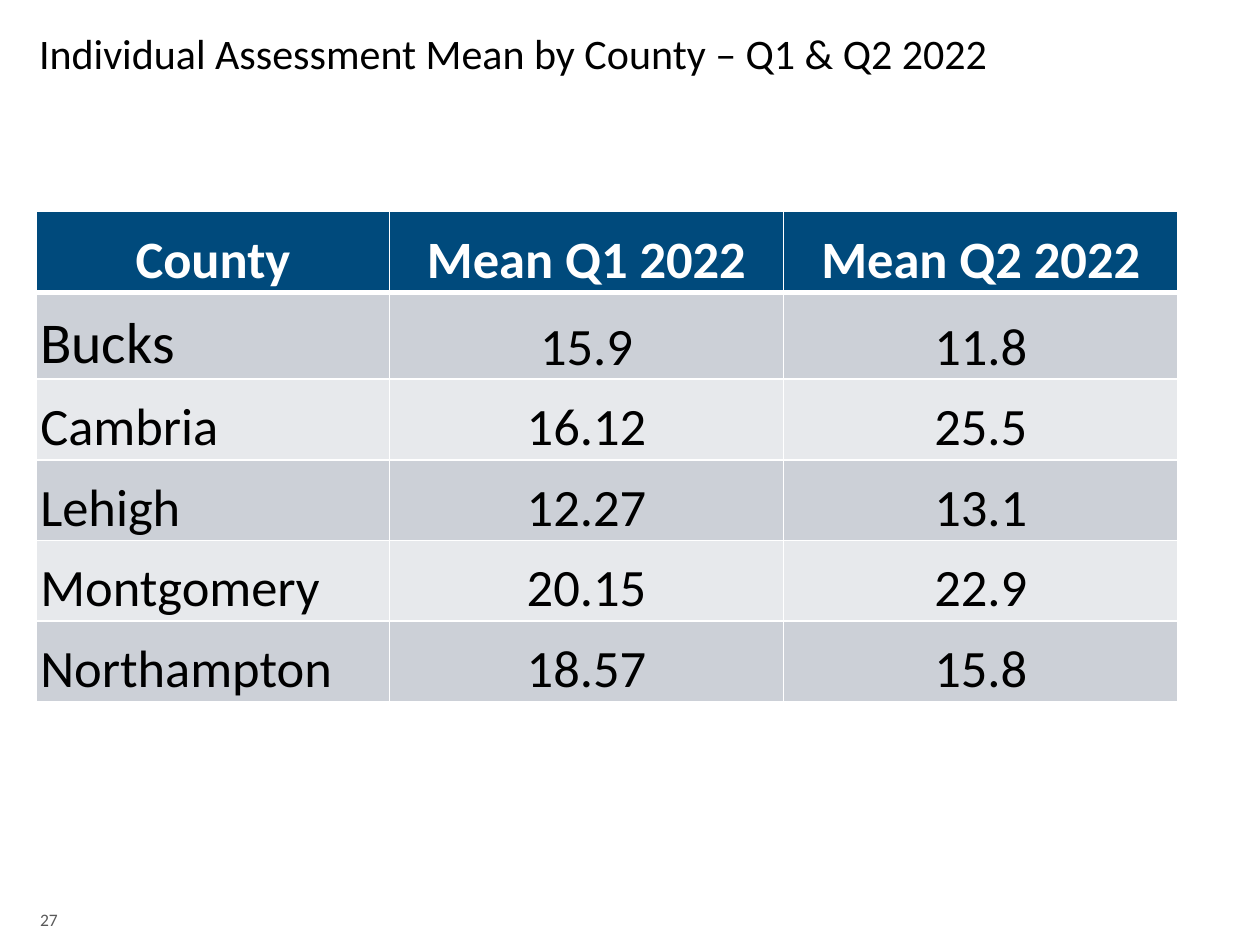
from typing import NamedTuple

from lxml.etree import SubElement
from pptx import Presentation
from pptx.dml.color import RGBColor
from pptx.enum.text import MSO_ANCHOR, PP_ALIGN
from pptx.oxml.ns import qn
from pptx.util import Inches, Pt

FONT = "Calibri"
BLACK, WHITE, GRAY = "000000", "FFFFFF", "595959"
HEADER_FILL = "004A7C"
BAND_FILLS = ("CCD0D7", "E7E9EC")
HEADERS = ("County", "Mean Q1 2022", "Mean Q2 2022")
COLUMN_WIDTHS = (2.8, 3.13, 3.13)
HEADER_HEIGHT = 0.64


class CountyRow(NamedTuple):
    county: str
    first_quarter: str
    second_quarter: str
    name_size: int = 30
    height: float = 0.64


COUNTY_ROWS = (
    CountyRow("Bucks", "15.9", "11.8", name_size=33, height=0.69),
    CountyRow("Cambria", "16.12", "25.5"),
    CountyRow("Lehigh", "12.27", "13.1"),
    CountyRow("Montgomery", "20.15", "22.9"),
    CountyRow("Northampton", "18.57", "15.8"),
)


def color(value: str) -> RGBColor:
    return RGBColor.from_string(value)


def write_text(text_frame, text: str, *, size: float, font_color: str = BLACK,
               bold: bool = False, align=PP_ALIGN.LEFT, line_spacing=None):
    paragraph = text_frame.paragraphs[0]
    paragraph.alignment = align
    if line_spacing:
        paragraph.line_spacing = line_spacing
    run = paragraph.add_run()
    run.text = text
    run.font.name = FONT
    run.font.size = Pt(size)
    run.font.bold = bold
    run.font.color.rgb = color(font_color)
    return paragraph


def add_borders(cell, bottom_width: float) -> None:
    """Draw white cell borders; they must come before the fill in the XML."""
    properties = cell._tc.get_or_add_tcPr()
    for side, width in (("L", 1), ("R", 1), ("T", 1), ("B", bottom_width)):
        line = SubElement(properties, qn(f"a:ln{side}"), w=str(Pt(width)))
        SubElement(SubElement(line, qn("a:solidFill")), qn("a:srgbClr"), val=WHITE)


def format_cell(cell, text: str, fill: str, bottom_width: float = 1, **text_format) -> None:
    cell.vertical_anchor = MSO_ANCHOR.BOTTOM
    cell.margin_left = cell.margin_right = cell.margin_top = Inches(0.03)
    cell.margin_bottom = 0
    add_borders(cell, bottom_width)
    cell.fill.solid()
    cell.fill.fore_color.rgb = color(fill)
    write_text(cell.text_frame, text, **text_format)


def add_title(slide) -> None:
    title = slide.shapes.title
    title.left, title.top = Inches(0.21), Inches(0.21)
    title.width, title.height = Inches(8.27), Inches(1.24)
    title.text_frame.vertical_anchor = MSO_ANCHOR.TOP
    write_text(title.text_frame, "Individual Assessment Mean by County – Q1 & Q2 2022",
               size=24, line_spacing=0.9)


def add_page_number(slide) -> None:
    box = slide.shapes.add_textbox(Inches(0.22), Inches(7.03), Inches(0.44), Inches(0.4))
    box.text_frame.word_wrap = True
    box.text_frame.vertical_anchor = MSO_ANCHOR.BOTTOM
    paragraph = write_text(box.text_frame, "27", size=10, font_color=GRAY)
    paragraph.space_after = Pt(6)


def add_county_table(slide) -> None:
    heights = [HEADER_HEIGHT, *(row.height for row in COUNTY_ROWS)]
    table = slide.shapes.add_table(
        len(heights), len(HEADERS), Inches(0.29), Inches(1.68),
        Inches(sum(COLUMN_WIDTHS)), Inches(sum(heights))).table
    for column, width in zip(table.columns, COLUMN_WIDTHS):
        column.width = Inches(width)
    for table_row, height in zip(table.rows, heights):
        table_row.height = Inches(height)

    # Header row
    for column_index, header in enumerate(HEADERS):
        format_cell(table.cell(0, column_index), header, HEADER_FILL, bottom_width=3,
                    size=30, font_color=WHITE, bold=True, align=PP_ALIGN.CENTER)

    # Banded county rows
    for row_index, row in enumerate(COUNTY_ROWS, start=1):
        fill = BAND_FILLS[(row_index - 1) % 2]
        format_cell(table.cell(row_index, 0), row.county, fill, size=row.name_size)
        for column_index, mean in enumerate((row.first_quarter, row.second_quarter), start=1):
            format_cell(table.cell(row_index, column_index), mean, fill,
                        size=30, align=PP_ALIGN.CENTER)


def main() -> None:
    presentation = Presentation()
    presentation.slide_width, presentation.slide_height = Inches(10), Inches(7.5)
    slide = presentation.slides.add_slide(presentation.slide_layouts[5])
    add_title(slide)
    add_page_number(slide)
    add_county_table(slide)
    presentation.save("out.pptx")


if __name__ == "__main__":
    main()
